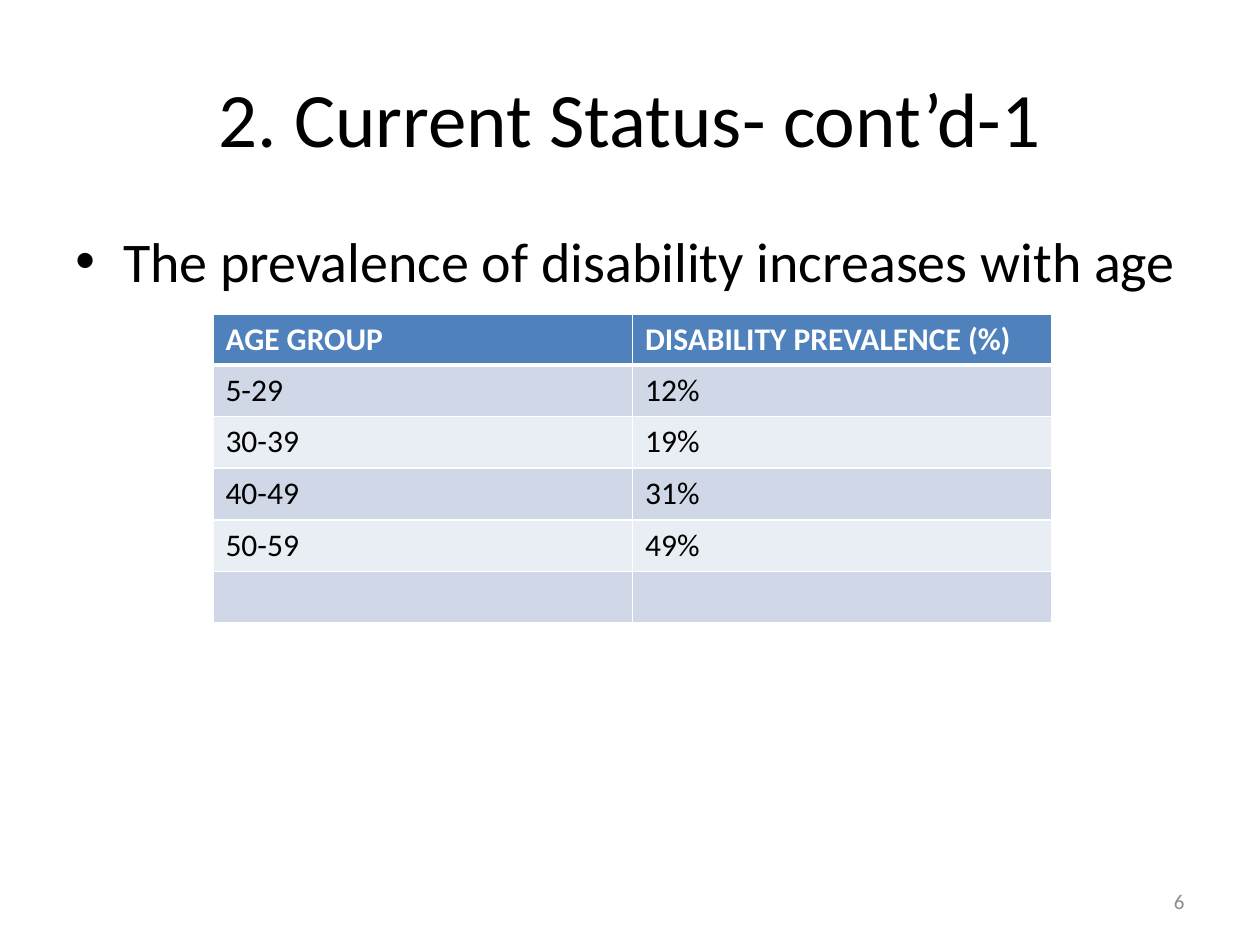
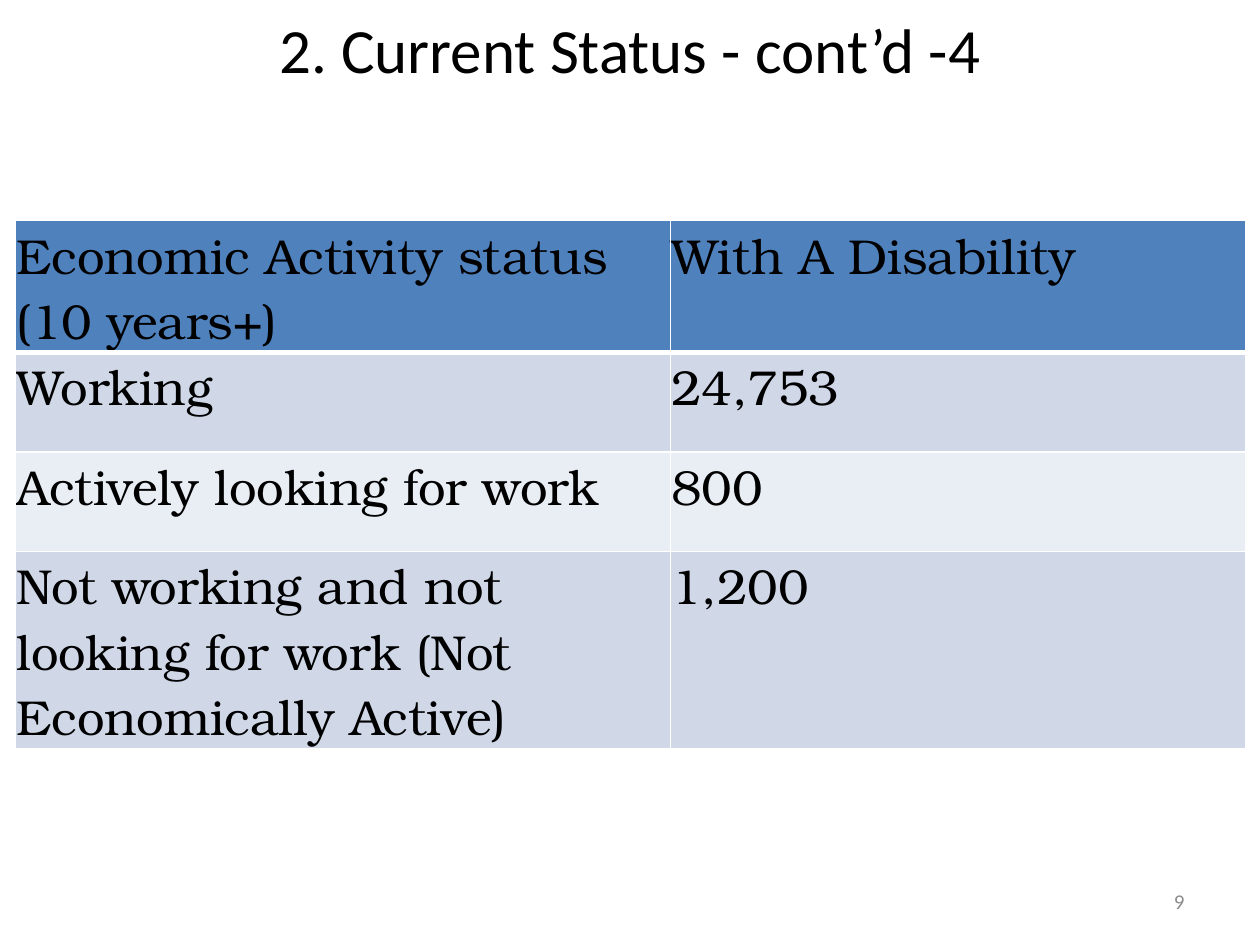
from lxml import etree
from pptx import Presentation
from pptx.dml.color import RGBColor
from pptx.enum.text import MSO_ANCHOR, MSO_AUTO_SIZE, PP_ALIGN
from pptx.oxml.ns import qn
from pptx.util import Inches, Pt

LEFT, CENTER, RIGHT = PP_ALIGN.LEFT, PP_ALIGN.CENTER, PP_ALIGN.RIGHT
TOP, MIDDLE = MSO_ANCHOR.TOP, MSO_ANCHOR.MIDDLE
NO_FIT = MSO_AUTO_SIZE.NONE
TITLE_ONLY = 5

BLACK, WHITE, GREY = "000000", "FFFFFF", "8C8C8C"
HEADER_FILL = "4F81BD"
BAND_FILLS = ("D0D8E8", "E9EDF4")
SANS, SERIF = "Calibri", "TeX Gyre Bonum"
CELL_INSETS = (0.1, 0.05, 0.1, 0.05)
TIGHT_INSETS = (0.01, 0.01, 0.01, 0)


def color(value):
    return RGBColor.from_string(value)


def write(frame, text, size=18, font=SANS, ink=BLACK, bold=False, align=LEFT):
    para = frame.paragraphs[0]
    para.alignment = align
    span = para.add_run()
    span.text = text
    span.font.size = Pt(size)
    span.font.name = font
    span.font.bold = bold
    span.font.color.rgb = color(ink)
    return para


def place(shape, box):
    shape.left, shape.top, shape.width, shape.height = map(Inches, box)


def prepare(frame, anchor):
    frame.word_wrap = True
    frame.auto_size = NO_FIT
    frame.vertical_anchor = anchor


def add_title(page, text, box, size, bottom_inset=0.05):
    title = page.shapes.title
    place(title, box)
    prepare(title.text_frame, MIDDLE)
    title.text_frame.margin_bottom = Inches(bottom_inset)
    write(title.text_frame, text, size=size, align=CENTER)


def add_text(page, text, box, anchor=TOP, **style):
    frame = page.shapes.add_textbox(*map(Inches, box)).text_frame
    prepare(frame, anchor)
    return write(frame, text, **style)


def add_bullet(page, text, box, indent=0.38):
    props = add_text(page, text, box, size=32)._p.get_or_add_pPr()
    props.set("marL", str(Inches(indent)))
    props.set("indent", str(-Inches(indent)))
    etree.SubElement(props, qn("a:buFont"), typeface="Arial")
    etree.SubElement(props, qn("a:buChar"), char="•")


def add_page_number(page, number):
    add_text(page, number, (7.17, 6.95, 2.33, 0.4), anchor=MIDDLE,
             size=12, ink=GREY, align=RIGHT)


def border_cell(cell, top, bottom):
    """Draw white cell edges; top and bottom are widths in points."""
    props = cell._tc.get_or_add_tcPr()
    edges = (("L", 1), ("R", 1), ("T", top), ("B", bottom))
    for position, (side, width) in enumerate(edges):
        line = etree.Element(qn(f"a:ln{side}"), w=str(Pt(width)))
        fill = etree.SubElement(line, qn("a:solidFill"))
        etree.SubElement(fill, qn("a:srgbClr"), val=WHITE)
        props.insert(position, line)


def add_banded_table(page, rows, left, top, widths, heights,
                     insets=CELL_INSETS, header_style=None, **style):
    shape = page.shapes.add_table(len(rows), len(widths), Inches(left), Inches(top),
                                  Inches(sum(widths)), Inches(sum(heights)))
    table = shape.table
    for column, width in zip(table.columns, widths):
        column.width = Inches(width)
    for index, (row, height, texts) in enumerate(zip(table.rows, heights, rows)):
        row.height = Inches(height)
        for cell, text in zip(row.cells, texts):
            cell.margin_left, cell.margin_top, cell.margin_right, cell.margin_bottom = (
                map(Inches, insets))
            cell.fill.solid()
            fill = BAND_FILLS[(index - 1) % 2] if index else HEADER_FILL
            cell.fill.fore_color.rgb = color(fill)
            border_cell(cell, top=3 if index == 1 else 1, bottom=1 if index else 3)
            if text:
                extra = header_style if header_style and index == 0 else {}
                write(cell.text_frame, text, **{**style, **extra})


def add_page(deck):
    return deck.slides.add_slide(deck.slide_layouts[TITLE_ONLY])


def build_age_slide(deck):
    page = add_page(deck)
    add_title(page, "2. Current Status- cont’d-1", (0.5, 0.3, 9, 1.25), size=44)
    add_bullet(page, "The prevalence of disability increases with age",
               (0.5, 1.75, 9, 4.95))
    add_page_number(page, "6")
    rows = [
        ("AGE GROUP", "DISABILITY PREVALENCE (%)"),
        ("5-29", "12%"),
        ("30-39", "19%"),
        ("40-49", "31%"),
        ("50-59", "49%"),
        ("", ""),
    ]
    add_banded_table(page, rows, 1.69, 2.49, [3.33] * 2, [0.4] + [0.41] * 5,
                     header_style={"ink": WHITE, "bold": True})


def build_activity_slide(deck):
    page = add_page(deck)
    add_title(page, "2. Current Status - cont’d -4", (0.5, 0.3, 9, 0.77),
              size=36, bottom_inset=0.65)
    rows = [
        ("Economic Activity status (10 years+)", "With A Disability"),
        ("Working", "24,753"),
        ("Actively looking for work", "800"),
        ("Not working and not looking for work (Not Economically Active)", "1,200"),
    ]
    add_banded_table(page, rows, 0.12, 1.75, [5.2, 4.57], [1.04, 0.79, 0.79, 1.56],
                     insets=TIGHT_INSETS, size=28, font=SERIF)
    add_page_number(page, "9")


def main():
    deck = Presentation()
    deck.slide_width, deck.slide_height = Inches(10), Inches(7.5)
    build_age_slide(deck)
    build_activity_slide(deck)
    deck.save("out.pptx")


if __name__ == "__main__":
    main()
